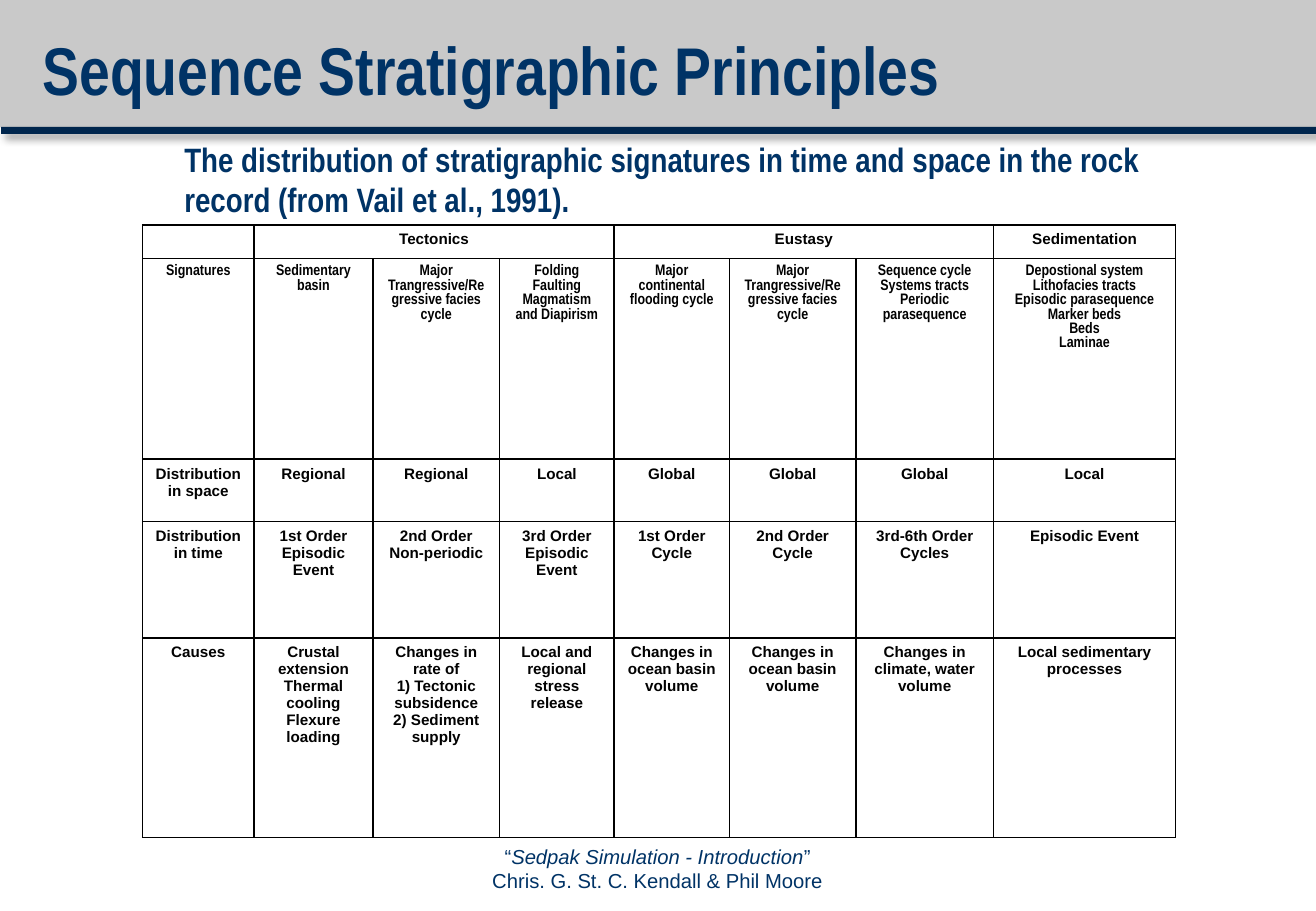
from lxml import etree
from pptx import Presentation
from pptx import util as u
from pptx.dml.color import RGBColor
from pptx.enum import shapes, text
from pptx.oxml import parse_xml
from pptx.oxml.ns import nsdecls, qn

GREY = RGBColor(0xC9, 0xC9, 0xC9)
DEEP_NAVY = RGBColor(0x00, 0x26, 0x4D)
NAVY = RGBColor(0x00, 0x33, 0x66)
INK = RGBColor(0x02, 0x02, 0x02)
ALIGN = text.PP_ALIGN
ANCHOR = text.MSO_ANCHOR


def write(frame, lines, color, font, layout):
    frame.word_wrap = True
    for number, line in enumerate(lines):
        paragraph = frame.add_paragraph() if number else frame.paragraphs[0]
        for name, value in layout.items():
            setattr(paragraph, name, value)
        for words, italic in line:
            run = paragraph.add_run()
            run.text = words
            for name, value in {**font, "italic": italic}.items():
                setattr(run.font, name, value)
            run.font.color.rgb = color


deck = Presentation()
deck.slide_width, deck.slide_height = u.Pt(780), u.Pt(540)
slide = deck.slides.add_slide(deck.slide_layouts[5])

bars = []
for left, top, width, height, color in [
    (0, 0, 780, 75.6, GREY),
    (0.72, 75.2, 779.28, 4.2, DEEP_NAVY),
]:
    bar = slide.shapes.add_shape(
        shapes.MSO_SHAPE.RECTANGLE, *map(u.Pt, (left, top, width, height)))
    bar.shadow.inherit = False
    bar.fill.solid()
    bar.fill.fore_color.rgb = color
    bar.line.fill.background()
    bars.append(bar)

effects = bars[1].element.spPr.find(qn("a:effectLst"))
effects.append(parse_xml(
    f'<a:outerShdw {nsdecls("a")} blurRad="{u.Pt(5)}" dist="{u.Pt(4)}" dir="2700000">'
    '<a:srgbClr val="000000"><a:alpha val="40000"/></a:srgbClr></a:outerShdw>'))

credit = slide.shapes.add_textbox(*map(u.Pt, (224.2, 496.8, 331.2, 28.8)))
write(
    credit.text_frame,
    [[("“", False), ("Sedpak Simulation - Introduction", True), ("”", False)],
     [("Chris. G. St. C. Kendall & Phil Moore", False)]],
    NAVY, {"name": "Arial", "size": u.Pt(12)}, {"alignment": ALIGN.CENTER})

columns = [66, 70.6, 75, 68, 68.3, 75, 81.5, 108]
rows = [20, 118.8, 36.8, 69.2, 118.2]
facies = "Major Trangressive/Regressive facies cycle"
basin_volume = "Changes in ocean basin volume"
entries = [
    ["", "Tectonics", "", "", "Eustasy", "", "", "Sedimentation"],
    ["Signatures", "Sedimentary basin", facies,
     "Folding\nFaulting\nMagmatism and Diapirism",
     "Major continental flooding cycle", facies,
     "Sequence cycle\nSystems tracts\nPeriodic parasequence",
     "Depostional system\nLithofacies tracts\nEpisodic parasequence\n"
     "Marker beds\nBeds\nLaminae"],
    ["Distribution in space", "Regional", "Regional", "Local",
     "Global", "Global", "Global", "Local"],
    ["Distribution in time", "1st Order Episodic Event",
     "2nd Order\nNon-periodic", "3rd Order Episodic Event",
     "1st Order Cycle", "2nd Order Cycle", "3rd-6th Order Cycles",
     "Episodic Event"],
    ["Causes", "Crustal extension\nThermal cooling\nFlexure loading",
     "Changes in rate of\n1) Tectonic subsidence\n2) Sediment supply",
     "Local and regional stress release", basin_volume, basin_volume,
     "Changes in climate, water volume", "Local sedimentary processes"],
]
signatures = slide.shapes.add_table(
    len(rows), len(columns),
    *map(u.Pt, (84.5, 133.4, sum(columns), sum(rows)))).table
for flag in ("first_row", "horz_banding"):
    setattr(signatures, flag, False)
for column, width in zip(signatures.columns, columns):
    column.width = u.Pt(width)
for row, height in zip(signatures.rows, rows):
    row.height = u.Pt(height)
for first in (1, 4):
    signatures.cell(0, first).merge(signatures.cell(0, first + 2))

for r, row in enumerate(entries):
    font = {"name": "Arial Narrow" if r == 1 else "Arial",
            "size": u.Pt(9), "bold": True}
    for c, entry in enumerate(row):
        cell = signatures.cell(r, c)
        cell.fill.background()
        for position, side in enumerate(("lnL", "lnR", "lnT", "lnB")):
            cell._tc.tcPr.insert(position, parse_xml(
                f'<a:{side} {nsdecls("a")} w="{u.Pt(1)}"><a:solidFill>'
                f'<a:srgbClr val="000000"/></a:solidFill></a:{side}>'))
        if entry:
            lines = [[(line, False)] for line in entry.split("\n")]
            write(cell.text_frame, lines, INK, font, {"alignment": ALIGN.CENTER})
        else:
            blank = cell.text_frame.paragraphs[0]._p
            etree.SubElement(blank, qn("a:endParaRPr"), sz="900")

subtitle = slide.shapes.add_textbox(*map(u.Pt, (102.2, 78.5, 590.4, 55.4)))
subtitle.text_frame.vertical_anchor = ANCHOR.MIDDLE
write(
    subtitle.text_frame,
    [[("The distribution of stratigraphic signatures in time and space "
       "in the rock record (from Vail et al., 1991).", False)]],
    NAVY, {"name": "Arial Narrow", "size": u.Pt(20), "bold": True},
    {"alignment": ALIGN.LEFT})

title = slide.shapes.title
title_box = {"left": 18, "top": 7.6, "width": 678.2, "height": 72}
for name, value in title_box.items():
    setattr(title, name, u.Pt(value))
title.text_frame.auto_size = text.MSO_AUTO_SIZE.NONE
title.text_frame.vertical_anchor = ANCHOR.MIDDLE
write(
    title.text_frame, [[("Sequence Stratigraphic Principles", False)]],
    NAVY, {"name": "Arial Narrow", "size": u.Pt(40), "bold": True},
    {"alignment": ALIGN.LEFT, "line_spacing": 0.9})
title.element.getparent().append(title.element)

deck.save("out.pptx")
